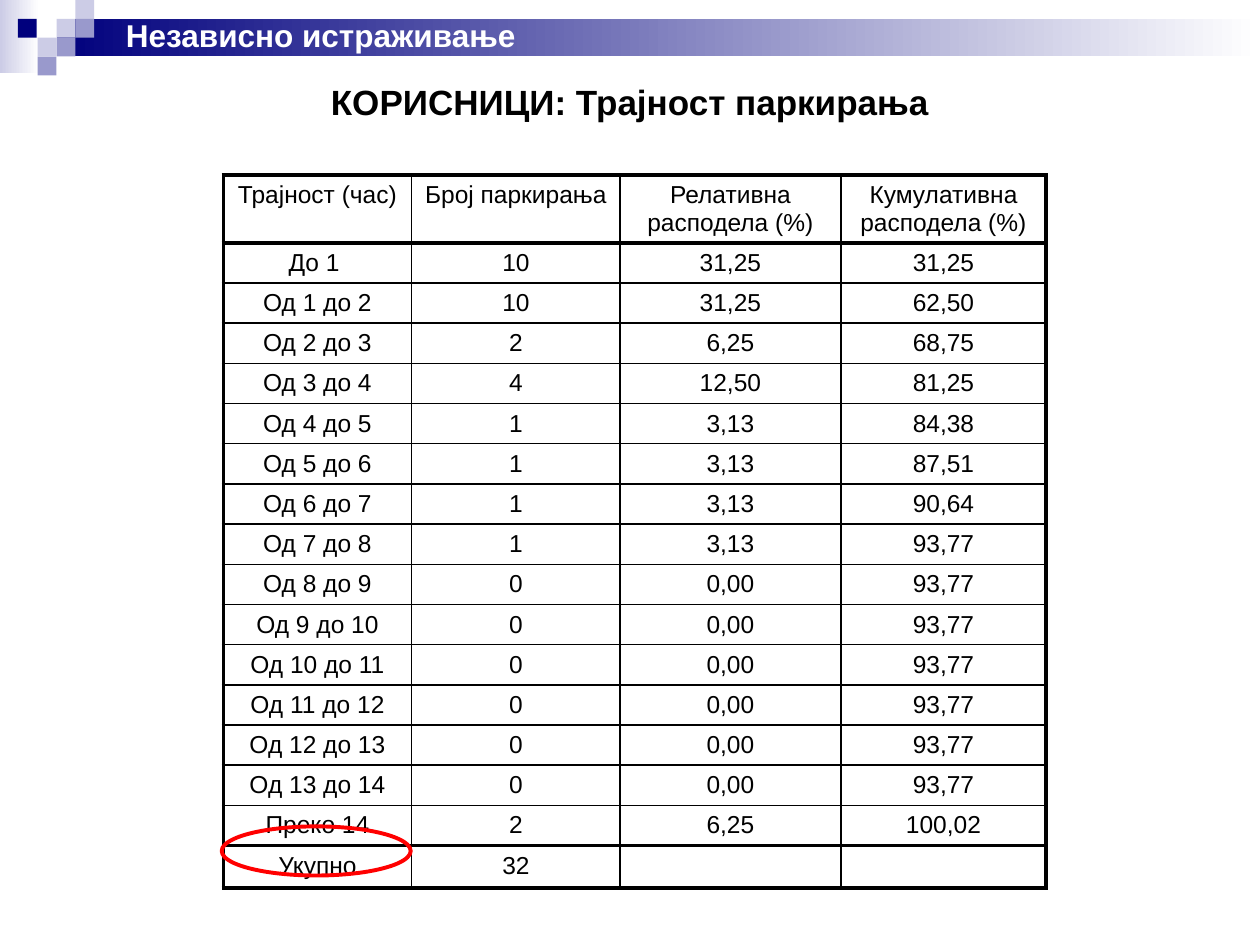
from lxml import etree
from pptx import Presentation
from pptx.dml.color import RGBColor
from pptx.enum.shapes import MSO_SHAPE
from pptx.enum.text import MSO_ANCHOR, PP_ALIGN
from pptx.oxml.ns import qn
from pptx.util import Cm, Pt

RECT, OVAL = MSO_SHAPE.RECTANGLE, MSO_SHAPE.OVAL
LEFT, MID = PP_ALIGN.LEFT, PP_ALIGN.CENTER
TOP, HALF = MSO_ANCHOR.TOP, MSO_ANCHOR.MIDDLE

HUES = {
    "navy": "00007D", "mauve": "9999CC", "pale": "CCCCE6",
    "white": "FFFFFF", "black": "000000", "red": "FF0000",
}
HEAD = ["Трајност (час)", "Број паркирања",
        "Релативна расподела (%)", "Кумулативна расподела (%)"]
SPANS = ["До 1 "] + [f"Од {n} до {n + 1}" for n in range(1, 14)] + ["Преко 14"]
COUNTS = [10, 10, 2, 4, 1, 1, 1, 1, 0, 0, 0, 0, 0, 0, 2]
SHARES = ["31,25", "31,25", "6,25", "12,50"] + ["3,13"] * 4 + ["0,00"] * 6 + ["6,25"]
SUMS = ["31,25", "62,50", "68,75", "81,25", "84,38", "87,51", "90,64"]
SUMS += ["93,77"] * 7 + ["100,02"]
ROWS = [HEAD, *zip(SPANS, COUNTS, SHARES, SUMS), ["Укупно", 32, "", ""]]
WIDTHS = [3.8, 4.2, 4.45, 4.14]
STEP = 0.38
TILES = [(3, 1, "pale"), (4, 0, "pale"), (4, 1, "mauve"), (2, 2, "pale"),
         (0.95, 1, "navy"), (3, 2, "mauve"), (2, 3, "mauve")]


class Deck:
    """Holds the style and the current slide and draws each kind of element."""

    def __init__(self, wide, high):
        self.show = Presentation()
        self.show.slide_width, self.show.slide_height = Cm(wide), Cm(high)
        self.slide = self.show.slides.add_slide(self.show.slide_layouts[6])
        self.font = "Arial"
        self.thin, self.thick = Pt(1), Pt(2.25)

    def tint(self, name):
        return RGBColor.from_string(HUES[name])

    def words(self, para, text, size, hue="black", bold=False, align=MID):
        para.alignment = align
        run = para.add_run()
        run.text = text
        form = {"name": self.font, "size": Pt(size), "bold": bold}
        for key, value in form.items():
            setattr(run.font, key, value)
        run.font.color.rgb = self.tint(hue)

    def shape(self, kind, box):
        item = self.slide.shapes.add_shape(kind, *map(Cm, box))
        item.shadow.inherit = False
        return item

    def block(self, box, hue):
        item = self.shape(RECT, box)
        item.fill.solid()
        item.fill.fore_color.rgb = self.tint(hue)
        item.line.fill.background()

    def fade(self, box, hue):
        item = self.shape(RECT, box)
        item.fill.gradient()
        item.fill.gradient_angle = 0
        for stop, name in zip(item.fill.gradient_stops, (hue, "white")):
            stop.color.rgb = self.tint(name)
        item.line.fill.background()

    def ring(self, box, hue):
        item = self.shape(OVAL, box)
        item.fill.background()
        item.line.color.rgb = self.tint(hue)
        item.line.width = self.thick

    def label(self, box, text, anchor, **look):
        frame = self.slide.shapes.add_textbox(*map(Cm, box)).text_frame
        form = {"word_wrap": True, "vertical_anchor": anchor}
        for key, value in form.items():
            setattr(frame, key, value)
        self.words(frame.paragraphs[0], text, **look)

    def edge(self, cell, sides):
        props = cell._tc.get_or_add_tcPr()
        for side, bold in sides.items():
            width = self.thick if bold else self.thin
            line = etree.SubElement(props, qn(f"a:ln{side}"), w=str(width))
            fill = etree.SubElement(line, qn("a:solidFill"))
            etree.SubElement(fill, qn("a:srgbClr"), val=HUES["black"])

    def table(self, left, top, rows, widths, highs, size):
        box = left, top, sum(widths), sum(highs)
        grid = self.slide.shapes.add_table(
            len(rows), len(widths), *map(Cm, box)).table
        grid.first_row = grid.horz_banding = False
        for col, width in zip(grid.columns, widths):
            col.width = Cm(width)
        for row, high in zip(grid.rows, highs):
            row.height = Cm(high)
        last, end = len(rows) - 1, len(widths) - 1
        for r, row in enumerate(rows):
            for c, value in enumerate(row):
                cell = grid.cell(r, c)
                self.edge(cell, {"L": c == 0, "R": c == end,
                                 "T": r in (0, 1, last),
                                 "B": r in (0, last - 1, last)})
                cell.fill.background()
                para = cell.text_frame.paragraphs[0]
                if value == "":
                    etree.SubElement(para._p, qn("a:endParaRPr"),
                                     sz=str(size * 100))
                else:
                    self.words(para, str(value), size)


def main():
    deck = Deck(25.4, 19.05)
    deck.fade((0, 0, 0.79, 1.47), "pale")
    deck.fade((1.14, STEP, 24.26, 2 * STEP), "navy")
    for col, row, hue in TILES:
        deck.block((col * STEP, row * STEP, STEP, STEP), hue)
    highs = [1.36] + [0.81] * (len(ROWS) - 1)
    deck.table(4.5, 3.53, ROWS, WIDTHS, highs, 14)
    deck.label((1.27, 1.12, 22.86, 1.85), "КОРИСНИЦИ: Трајност паркирања",
               HALF, size=20, bold=True)
    deck.ring((4.47, 16.66, 3.81, 0.99), "red")
    deck.label((2.29, 0.2, 14.2, 1.02), "Независно истраживање",
               TOP, size=18, hue="white", bold=True, align=LEFT)
    deck.show.save("out.pptx")


if __name__ == "__main__":
    main()
